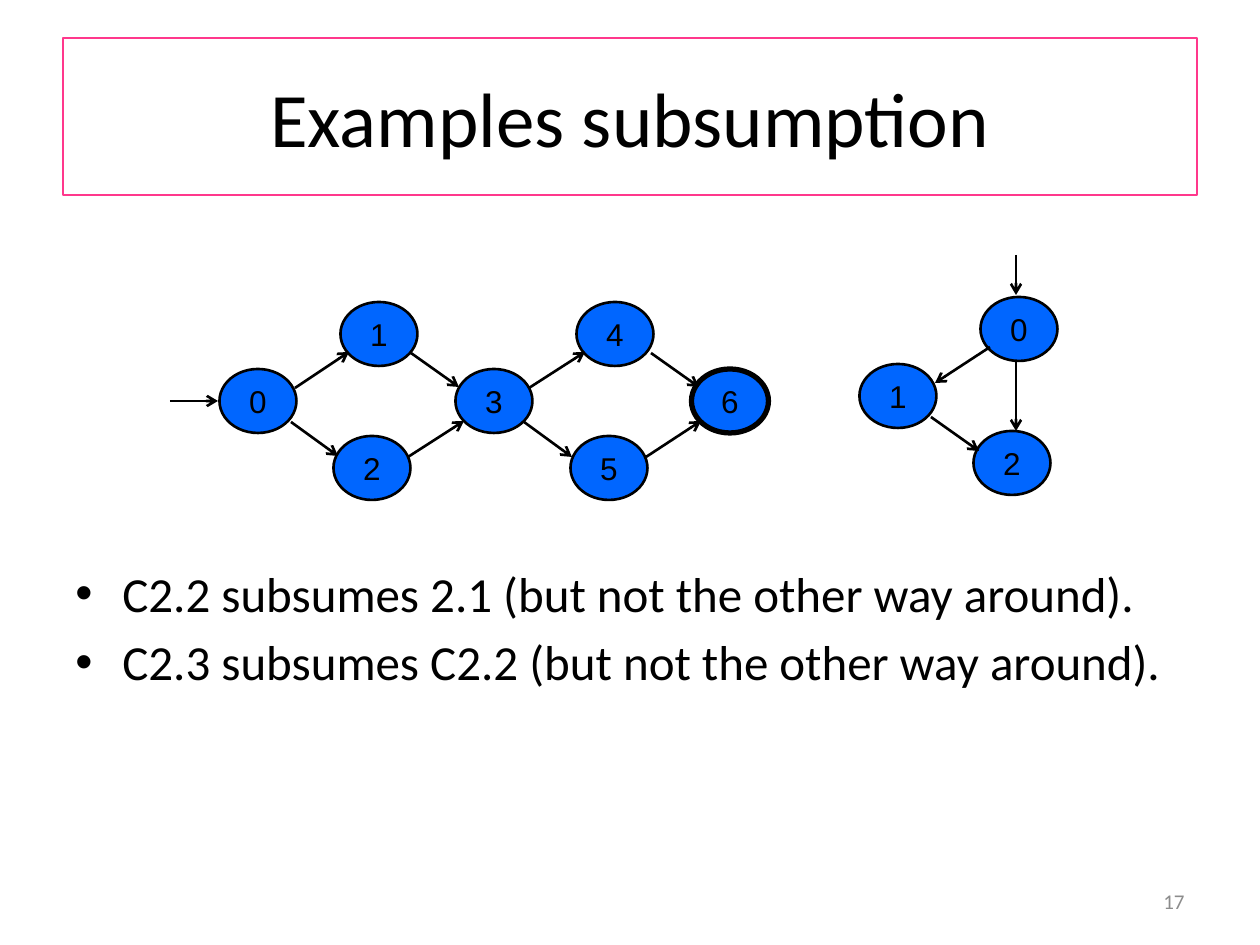
from lxml import etree
from pptx import Presentation
from pptx import util as u
from pptx.dml.color import RGBColor
from pptx.enum import shapes, text
from pptx.oxml.ns import qn

PX = 914400 / 126
BLACK = RGBColor(0x00, 0x00, 0x00)
BLUE = RGBColor(0x00, 0x66, 0xFF)
PINK = RGBColor(0xFF, 0x38, 0x8C)
GRAY = RGBColor(0x8C, 0x8C, 0x8C)
NODE_W, NODE_H = 77, 64


def px(*values):
    return [u.Emu(round(v * PX)) for v in values]


def add_run(p, words, size, font, color):
    r = p.add_run()
    r.text = words
    r.font.size = u.Pt(size)
    r.font.name = font
    r.font.color.rgb = color


prs = Presentation()
prs.slide_width, prs.slide_height = px(1260, 945)
s = prs.slides.add_slide(prs.slide_layouts[6])

sp = s.shapes.add_textbox(*px(63, 38, 1134, 157))
sp.line.color.rgb = PINK
sp.line.width = u.Pt(1)
tf = sp.text_frame
tf.word_wrap = True
tf.vertical_anchor = text.MSO_ANCHOR.MIDDLE
p = tf.paragraphs[0]
p.alignment = text.PP_ALIGN.CENTER
add_run(p, "Examples subsumption", 44, "Calibri", BLACK)

sp = s.shapes.add_textbox(*px(63, 557, 1134, 339))
tf = sp.text_frame
tf.word_wrap = True
bullets = [
    "C2.2 subsumes 2.1 (but not the other way around).",
    "C2.3 subsumes C2.2 (but not the other way around).",
]
for i, words in enumerate(bullets):
    p = tf.add_paragraph() if i else tf.paragraphs[0]
    p.space_before = u.Pt(5.6)
    add_run(p, words, 28, "Calibri", BLACK)
    pPr = p._p.get_or_add_pPr()
    indent, = px(47)
    pPr.set("marL", str(indent))
    pPr.set("indent", str(-indent))
    etree.SubElement(pPr, qn("a:buFont"), typeface="Arial")
    etree.SubElement(pPr, qn("a:buChar"), char="•")

sp = s.shapes.add_textbox(*px(903, 876, 294, 50))
tf = sp.text_frame
tf.word_wrap = True
tf.vertical_anchor = text.MSO_ANCHOR.MIDDLE
p = tf.paragraphs[0]
p.alignment = text.PP_ALIGN.RIGHT
add_run(p, "17", 12, "Calibri", GRAY)

nodes = [
    ("0", 258, 401, 1.5), ("1", 379, 334, 1.5), ("2", 372, 468, 1.5),
    ("3", 494, 401, 1.5), ("4", 615, 334, 1.5), ("5", 609, 468, 1.5),
    ("6", 730, 401, 3),
    ("0", 1019, 329, 1.5), ("1", 898, 396, 1.5), ("2", 1012, 463, 1.5),
]
for label, cx, cy, width in nodes:
    box = px(cx - NODE_W / 2, cy - NODE_H / 2, NODE_W, NODE_H)
    sp = s.shapes.add_shape(shapes.MSO_SHAPE.OVAL, *box)
    sp.shadow.inherit = False
    sp.fill.solid()
    sp.fill.fore_color.rgb = BLUE
    sp.line.color.rgb = BLACK
    sp.line.width = u.Pt(width)
    tf = sp.text_frame
    tf.margin_left = tf.margin_right = tf.margin_top = tf.margin_bottom = 0
    tf.word_wrap = False
    tf.vertical_anchor = text.MSO_ANCHOR.MIDDLE
    p = tf.paragraphs[0]
    p.alignment = text.PP_ALIGN.CENTER
    add_run(p, label, 18, "Arial", BLACK)

arrows = [
    (170, 401, 218, 401),
    (295, 388, 349, 352), (291, 422, 338, 456),
    (411, 353, 459, 387), (408, 457, 464, 421),
    (529, 388, 585, 352), (524, 422, 572, 457),
    (651, 353, 699, 387), (646, 457, 701, 421),
    (1016, 255, 1016, 295), (990, 347, 935, 383),
    (931, 417, 979, 451), (1016, 362, 1016, 431),
]
for ends in arrows:
    c = s.shapes.add_connector(shapes.MSO_CONNECTOR.STRAIGHT, *px(*ends))
    c.line.color.rgb = BLACK
    c.line.width = u.Pt(1.5)
    etree.SubElement(c.line._get_or_add_ln(), qn("a:tailEnd"), type="arrow")
    etree.SubElement(c._element.spPr, qn("a:effectLst"))

prs.save("out.pptx")
